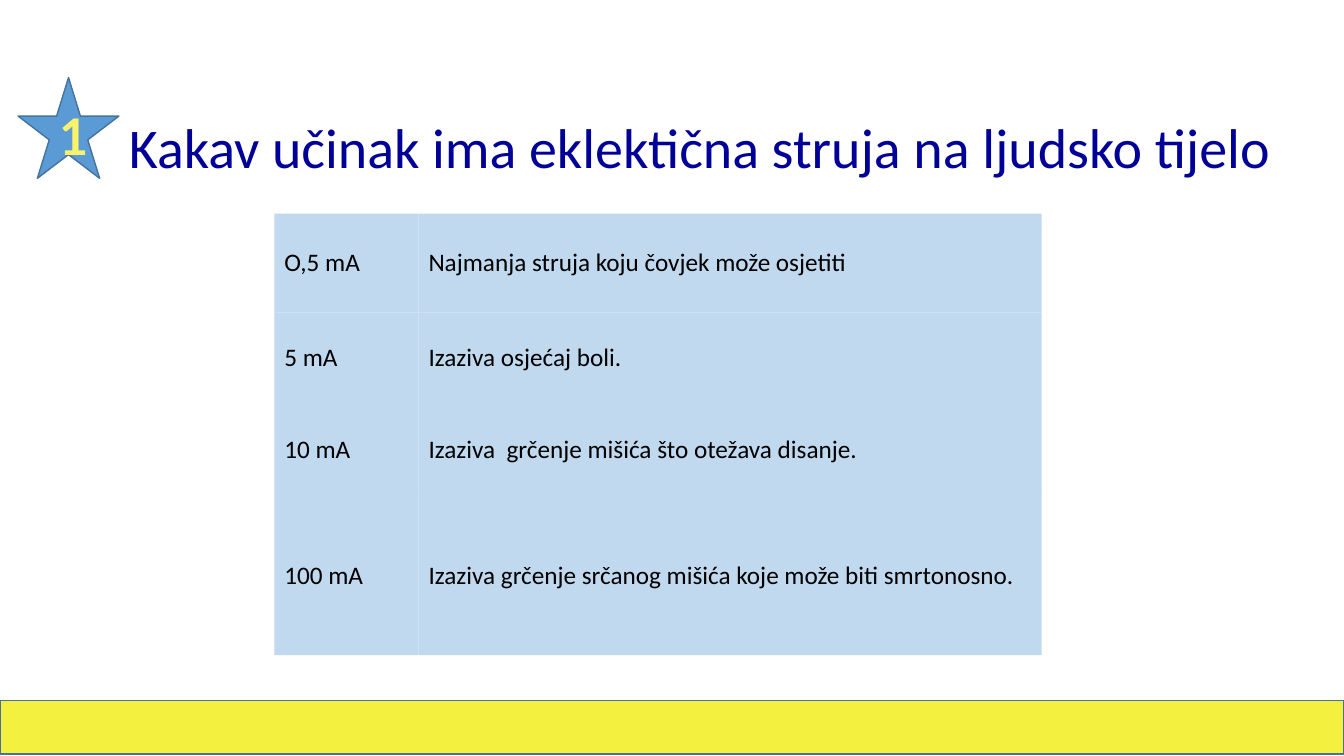
from lxml import etree
from pptx import Presentation
from pptx import util as u
from pptx.dml.color import RGBColor
from pptx.enum import shapes, text
from pptx.oxml.ns import qn

COLOURS = {
    "title": "000099",
    "band": "F4F040",
    "outline": "43739E",
    "star": "5B9BD5",
    "number": "FCF26A",
    "cell": "BDD7EE",
    "body": "000000",
}
WIDTH, HEIGHT = 13.33, 7.5
PLAIN_TABLE = "{2D5ABB26-0587-4C30-8999-92F81FD0307C}"
COLUMNS = [1.43, 6.18]
ROWS = [0.98, 0.91, 0.91, 1.58]
EFFECTS = [
    ("O,5 mA", "Najmanja struja koju čovjek može osjetiti"),
    ("5 mA", "Izaziva osjećaj boli."),
    ("10 mA", "Izaziva  grčenje mišića što otežava disanje."),
    ("100 mA", "Izaziva grčenje srčanog mišića koje može biti smrtonosno."),
]


def colour(name):
    return RGBColor.from_string(COLOURS[name])


def write(frame, words, size, ink, font="Calibri", bold=False, align=None, spacing=None):
    para = frame.paragraphs[0]
    para.alignment = align
    para.line_spacing = spacing
    span = para.add_run()
    span.text = words
    span.font.size = u.Pt(size)
    span.font.name = font
    span.font.bold = bold
    span.font.color.rgb = colour(ink)


def add_outlined(page, kind, box, fill):
    shape = page.shapes.add_shape(kind, *map(u.Inches, box))
    shape.shadow.inherit = False
    shape.fill.solid()
    shape.fill.fore_color.rgb = colour(fill)
    shape.line.color.rgb = colour("outline")
    shape.line.width = u.Pt(1)
    return shape


def add_footer(page, box):
    add_outlined(page, shapes.MSO_SHAPE.RECTANGLE, box, "band")


def add_heading(page, box, words, number):
    left, top, width, height = box
    star_size = 1
    title_box = (left + star_size, top, width - star_size, height)
    title = page.shapes.add_textbox(*map(u.Inches, title_box))
    frame = title.text_frame
    frame.word_wrap = True
    frame.vertical_anchor = text.MSO_ANCHOR.MIDDLE
    write(frame, words, 40, "title", spacing=0.9)

    star_box = (left, top, star_size, star_size)
    star = add_outlined(page, shapes.MSO_SHAPE.STAR_5_POINT, star_box, "star")
    star.text_frame.vertical_anchor = text.MSO_ANCHOR.MIDDLE
    write(star.text_frame, number, 36, "number", font="Lato", bold=True,
          align=text.PP_ALIGN.CENTER)


def fill_cell(cell, words):
    cell.vertical_anchor = text.MSO_ANCHOR.MIDDLE
    cell.fill.solid()
    cell.fill.fore_color.rgb = colour("cell")
    tint = cell._tc.tcPr.find(".//" + qn("a:srgbClr"))
    etree.SubElement(tint, qn("a:alpha")).set("val", "94000")
    write(cell.text_frame, words, 18, "body")


def add_effects(page, left, top):
    size = (sum(COLUMNS), sum(ROWS))
    holder = page.shapes.add_table(len(ROWS), len(COLUMNS),
                                   *map(u.Inches, (left, top, *size)))
    table = holder.table
    table.first_row = False
    table.horz_banding = False
    table._tbl.tblPr.find(qn("a:tableStyleId")).text = PLAIN_TABLE
    for column, width in zip(table.columns, COLUMNS):
        column.width = u.Inches(width)
    for row, height, effect in zip(table.rows, ROWS, EFFECTS):
        row.height = u.Inches(height)
        for cell, words in zip(row.cells, effect):
            fill_cell(cell, words)


def main():
    deck = Presentation()
    deck.slide_width = u.Inches(WIDTH)
    deck.slide_height = u.Inches(HEIGHT)
    page = deck.slides.add_slide(deck.slide_layouts[6])
    add_footer(page, (0, 6.95, WIDTH, 0.53))
    add_heading(page, (0.18, 0.77, 12.58, 1.45),
                "Kakav učinak ima eklektična struja na ljudsko tijelo", "1")
    add_effects(page, 2.72, 2.12)
    deck.save("out.pptx")


if __name__ == "__main__":
    main()
